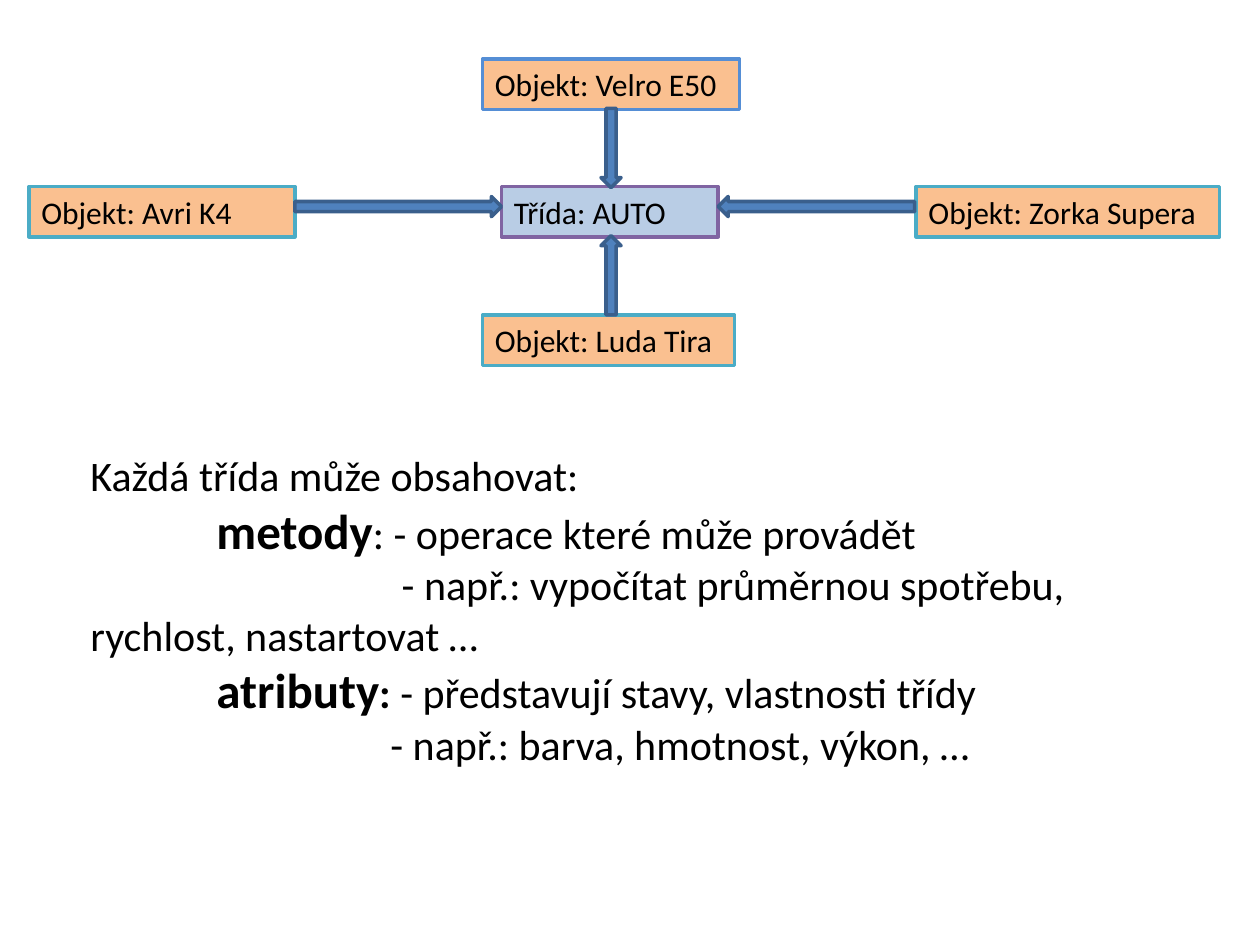
from dataclasses import dataclass

from pptx import Presentation
from pptx.dml.color import RGBColor
from pptx.enum import shapes, text
from pptx.util import Inches, Pt

FONT = "Calibri"
BLACK = RGBColor(0x00, 0x00, 0x00)
ORANGE = RGBColor(0xFA, 0xC0, 0x90)
PALE_BLUE = RGBColor(0xB9, 0xCD, 0xE5)
PURPLE = RGBColor(0x80, 0x64, 0xA2)
TEAL = RGBColor(0x4B, 0xAC, 0xC6)
BLUE = RGBColor(0x55, 0x8E, 0xD5)
ARROW_FILL = RGBColor(0x4F, 0x81, 0xBD)
ARROW_LINE = RGBColor(0x3A, 0x5F, 0x8C)

BOX_HEIGHT = 0.4
ARROW_THICKNESS = 0.16
TOP_ROW, MIDDLE_ROW, BOTTOM_ROW = 0.47, 1.48, 2.5
ARROW_X, ARROW_Y = 4.77, 1.56

Shape = shapes.MSO_SHAPE


@dataclass
class Box:
    label: str
    left: float
    top: float
    width: float
    line: RGBColor = TEAL
    fill: RGBColor = ORANGE


@dataclass
class Arrow:
    kind: Shape
    left: float
    top: float
    width: float = ARROW_THICKNESS
    height: float = ARROW_THICKNESS


@dataclass
class Line:
    """A paragraph: an optional bold term, then plain text."""
    body: str
    indent: float = 0
    term: str = ""
    colon_bold: bool = False


BOXES = [
    Box("Třída: AUTO", 3.98, MIDDLE_ROW, 1.72, PURPLE, PALE_BLUE),
    Box("Objekt: Avri K4", 0.23, MIDDLE_ROW, 2.11),
    Box("Objekt: Velro E50", 3.83, TOP_ROW, 2.04, BLUE),
    Box("Objekt: Zorka Supera", 7.27, MIDDLE_ROW, 2.41),
    Box("Objekt: Luda Tira", 3.83, BOTTOM_ROW, 2),
]
ARROWS = [
    Arrow(Shape.RIGHT_ARROW, 2.34, ARROW_Y, width=1.64),
    Arrow(Shape.DOWN_ARROW, ARROW_X, 0.86, height=0.63),
    Arrow(Shape.LEFT_ARROW, 5.7, ARROW_Y, width=1.56),
    Arrow(Shape.UP_ARROW, ARROW_X, 1.87, height=0.63),
]
LINES = [
    Line("Každá třída může obsahovat:"),
    Line("- operace které může provádět", 1, "metody"),
    Line("- např.: vypočítat průměrnou spotřebu, rychlost, nastartovat …", 2.47),
    Line("- představují stavy, vlastnosti třídy", 1, "atributy", True),
    Line("- např.: barva, hmotnost, výkon, …", 2.38),
]


def add_filled(s, kind: Shape, left: float, top: float, width: float,
               height: float, fill: RGBColor, line: RGBColor):
    sp = s.shapes.add_shape(kind, Inches(left), Inches(top),
                            Inches(width), Inches(height))
    sp.shadow.inherit = False
    sp.fill.solid()
    sp.fill.fore_color.rgb = fill
    sp.line.color.rgb = line
    sp.line.width = Pt(2)
    return sp


def add_box(s, box: Box) -> None:
    sp = add_filled(s, Shape.RECTANGLE, box.left, box.top, box.width,
                    BOX_HEIGHT, box.fill, box.line)
    tf = sp.text_frame
    tf.word_wrap = True
    tf.vertical_anchor = text.MSO_ANCHOR.TOP
    p = tf.paragraphs[0]
    p.text = box.label
    p.alignment = text.PP_ALIGN.LEFT
    set_font(p, 18)


def add_arrow(s, arrow: Arrow) -> None:
    add_filled(s, arrow.kind, arrow.left, arrow.top, arrow.width,
               arrow.height, ARROW_FILL, ARROW_LINE)


def set_font(p, size: float) -> None:
    p.font.name = FONT
    p.font.size = Pt(size)
    p.font.color.rgb = BLACK


def add_run(p, content: str, size: float, bold: bool) -> None:
    r = p.add_run()
    r.text = content
    r.font.size = Pt(size)
    r.font.bold = bold


def add_description(s, lines: list[Line]) -> None:
    tf = s.shapes.add_textbox(Inches(0.62), Inches(3.52),
                              Inches(8.83), Inches(2.96)).text_frame
    tf.word_wrap = True
    for i, line in enumerate(lines):
        p = tf.paragraphs[0] if i == 0 else tf.add_paragraph()
        set_font(p, 24)
        pPr = p._p.get_or_add_pPr()
        pPr.set("marL", "0")
        pPr.set("indent", str(Inches(line.indent)))
        if line.term:
            add_run(p, line.term, 28, True)
            add_run(p, ": ", 24, line.colon_bold)
        add_run(p, line.body, 24, False)


def main() -> None:
    prs = Presentation()
    prs.slide_width, prs.slide_height = Inches(10), Inches(7.5)
    s = prs.slides.add_slide(prs.slide_layouts[6])
    for box in BOXES:
        add_box(s, box)
    for arrow in ARROWS:
        add_arrow(s, arrow)
    add_description(s, LINES)
    prs.save("out.pptx")


if __name__ == "__main__":
    main()
